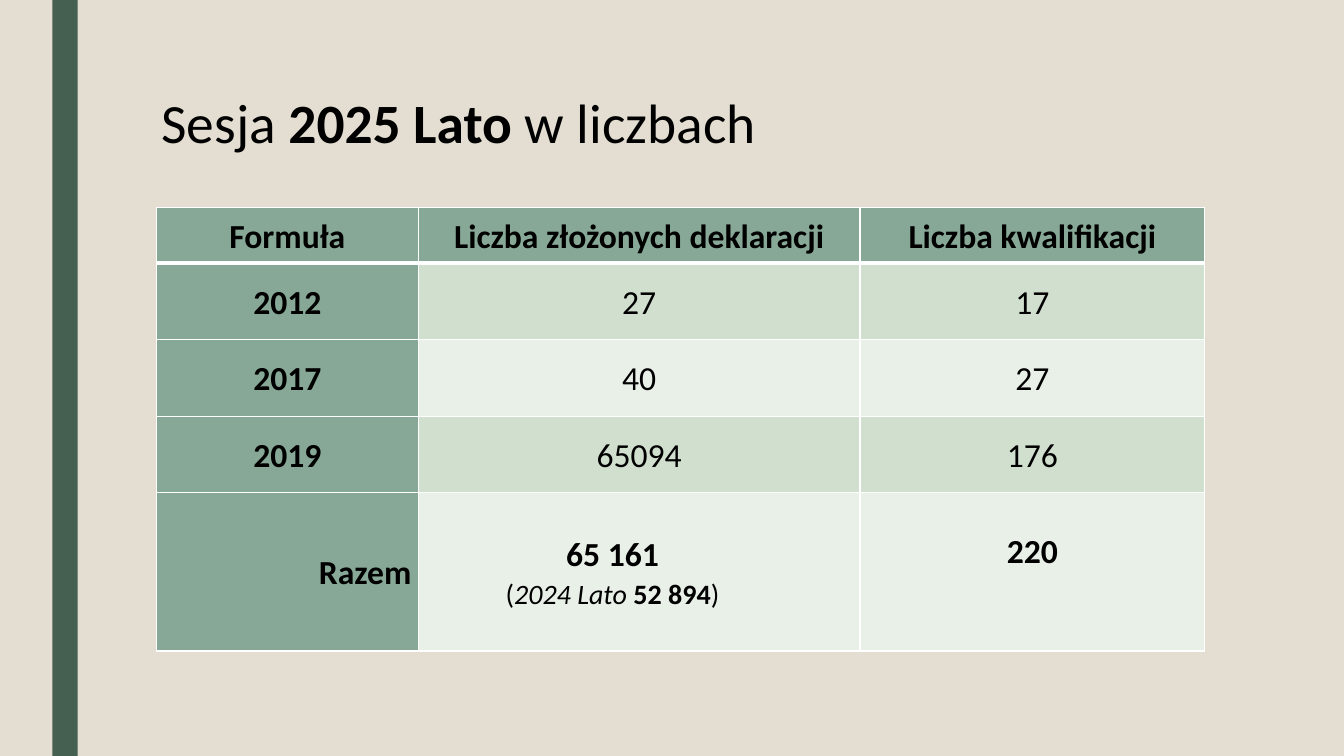
from dataclasses import dataclass

from lxml import etree
from pptx import Presentation
from pptx.dml.color import RGBColor
from pptx.enum.shapes import MSO_SHAPE
from pptx.enum.text import MSO_ANCHOR, MSO_AUTO_SIZE, PP_ALIGN
from pptx.oxml.ns import qn
from pptx.util import Inches, Pt

RECT = MSO_SHAPE.RECTANGLE
TOP, MIDDLE = MSO_ANCHOR.TOP, MSO_ANCHOR.MIDDLE
LEFT, CENTER, RIGHT = PP_ALIGN.LEFT, PP_ALIGN.CENTER, PP_ALIGN.RIGHT


@dataclass(frozen=True)
class Theme:
    font: str = "Calibri"
    background: str = "E3DED1"
    stripe: str = "455F51"
    text: str = "000000"
    header: str = "87A896"
    bands: tuple = ("D1DFCE", "E9F0E8")
    border: str = "FFFFFF"
    title_size: float = 39.6
    cell_size: int = 24
    note_size: int = 20
    line_spacing: float = 1.07


THEME = Theme()
WIDTH, HEIGHT = 13.33, 7.5
COLUMNS = (2.6, 4.38, 3.42)
ROWS = (0.55, 0.76, 0.76, 0.76, 1.57)
STRIPE_BOX = (0.52, 0, 0.25, HEIGHT)
TITLE_BOX = (1.5, 0.75, 10.5, 1.11)
TABLE_BOX = (1.55, 2.06, sum(COLUMNS), sum(ROWS))

TITLE = [("Sesja ", ""), ("2025 Lato ", "b"), ("w liczbach", "")]
HEADINGS = ("Formuła", "Liczba złożonych deklaracji", "Liczba kwalifikacji")
SESSIONS = (("2012", "27", "17"), ("2017", "40", "27"), ("2019", "65094", "176"))
TOTALS = ("Razem", "65 161", "220")
LAST_YEAR = [("(", ""), ("2024 Lato ", "i"), ("52 894", "b"), (")", "")]


def rgb(color):
    return RGBColor.from_string(color)


def inches(box):
    return [Inches(v) for v in box]


def write(p, runs, size, align=CENTER):
    """Fill a paragraph with (text, style) runs; style is '', 'b' or 'i'."""
    p.alignment = align
    p.line_spacing = THEME.line_spacing
    p.font.name = THEME.font
    p.font.size = Pt(size)
    p.font.color.rgb = rgb(THEME.text)
    for text, style in runs:
        r = p.add_run()
        r.text = text
        r.font.bold = style == "b"
        r.font.italic = style == "i"


def add_stripe(s, box):
    sp = s.shapes.add_shape(RECT, *inches(box))
    sp.shadow.inherit = False
    sp.fill.solid()
    sp.fill.fore_color.rgb = rgb(THEME.stripe)
    sp.line.fill.background()


def set_title(s, box):
    sp = s.shapes.title
    sp.left, sp.top, sp.width, sp.height = inches(box)
    tf = sp.text_frame
    tf.auto_size = MSO_AUTO_SIZE.NONE
    tf.vertical_anchor = TOP
    tf.margin_top = Inches(0.08)
    write(tf.paragraphs[0], TITLE, THEME.title_size, LEFT)


def set_borders(cell, bottom):
    tc_pr = cell._tc.get_or_add_tcPr()
    for side, width in (("L", 1), ("R", 1), ("T", 1), ("B", bottom)):
        ln = etree.SubElement(tc_pr, qn(f"a:ln{side}"), w=str(Pt(width)))
        fill = etree.SubElement(ln, qn("a:solidFill"))
        etree.SubElement(fill, qn("a:srgbClr"), val=THEME.border)


def format_cell(cell, row, col):
    set_borders(cell, 3 if row == 0 else 1)
    cell.fill.solid()
    heading = row == 0 or col == 0
    cell.fill.fore_color.rgb = rgb(THEME.header if heading else THEME.bands[(row - 1) % 2])
    cell.vertical_anchor = MIDDLE
    cell.margin_left = cell.margin_right = Inches(0.07)
    cell.margin_top = cell.margin_bottom = 0


def add_results(s, box):
    rows = (HEADINGS, *SESSIONS, TOTALS)
    last = len(rows) - 1
    table = s.shapes.add_table(len(rows), len(COLUMNS), *inches(box)).table
    table.horz_banding = False
    for column, width in zip(table.columns, COLUMNS):
        column.width = Inches(width)
    for row, height in zip(table.rows, ROWS):
        row.height = Inches(height)
    for i, values in enumerate(rows):
        for j, value in enumerate(values):
            cell = table.cell(i, j)
            format_cell(cell, i, j)
            style = "b" if i in (0, last) or j == 0 else ""
            align = RIGHT if (i, j) == (last, 0) else CENTER
            write(cell.text_frame.paragraphs[0], [(value, style)], THEME.cell_size, align)

    declared, qualifications = table.cell(last, 1), table.cell(last, 2)
    p = declared.text_frame.paragraphs[0]
    p._p.get_or_add_pPr().set("marR", str(Inches(0.53)))
    write(declared.text_frame.add_paragraph(), LAST_YEAR, THEME.note_size)
    qualifications.margin_bottom = Inches(0.42)


def main():
    prs = Presentation()
    prs.slide_width, prs.slide_height = inches((WIDTH, HEIGHT))
    s = prs.slides.add_slide(prs.slide_layouts.get_by_name("Title Only"))
    s.background.fill.solid()
    s.background.fill.fore_color.rgb = rgb(THEME.background)
    add_stripe(s, STRIPE_BOX)
    set_title(s, TITLE_BOX)
    add_results(s, TABLE_BOX)
    prs.save("out.pptx")


if __name__ == "__main__":
    main()
